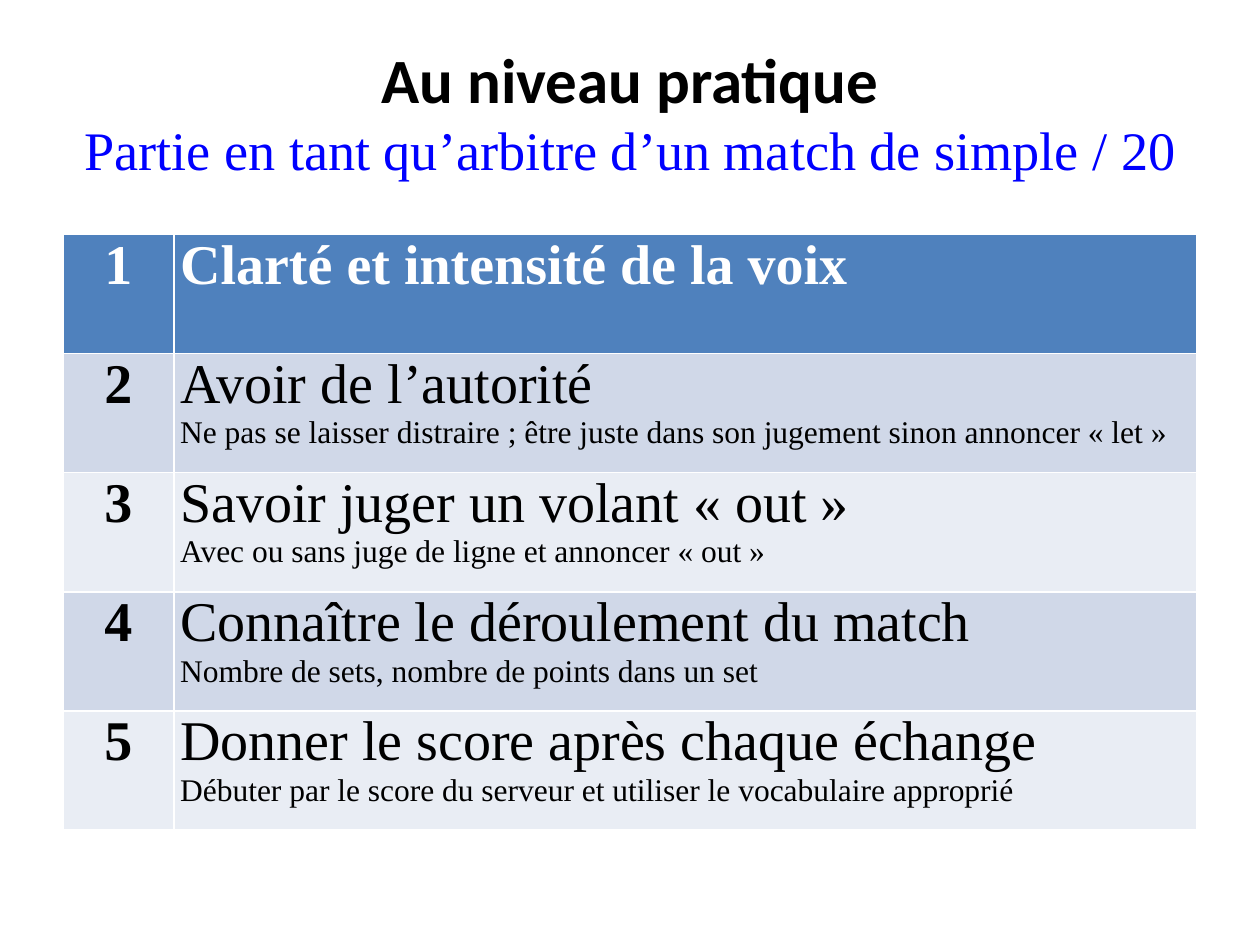
import pptx
import pptx.util
import pptx.dml.color
import pptx.enum.text

Inches = pptx.util.Inches
Align = pptx.enum.text.PP_ALIGN
Anchor = pptx.enum.text.MSO_ANCHOR

COLORS = {
    "black": "000000",
    "white": "FFFFFF",
    "blue": "0000FF",
    "head": "4F81BD",
    "dark": "D0D8E8",
    "light": "E9EDF4",
}
SERIF = "Times New Roman"

SKILLS = [
    ("Clarté et intensité de la voix", ""),
    ("Avoir de l’autorité",
     "Ne pas se laisser distraire ; être juste dans son jugement sinon annoncer « let »"),
    ("Savoir juger un volant « out »",
     "Avec ou sans juge de ligne et annoncer « out »"),
    ("Connaître le déroulement du match",
     "Nombre de sets, nombre de points dans un set"),
    ("Donner le score après chaque échange",
     "Débuter par le score du serveur et utiliser le vocabulaire approprié"),
]


def color(name):
    return pptx.dml.color.RGBColor.from_string(COLORS[name])


def add_run(para, text, size, ink="black", bold=False, font=SERIF):
    run = para.add_run()
    run.text = text
    run.font.name = font
    run.font.size = pptx.util.Pt(size)
    run.font.bold = bold
    run.font.color.rgb = color(ink)


def add_title(slide, left, top, width, height):
    box = slide.shapes.add_textbox(left, top, width, height)
    frame = box.text_frame
    frame.word_wrap = True
    frame.vertical_anchor = Anchor.MIDDLE
    para = frame.paragraphs[0]
    para.alignment = Align.CENTER
    add_run(para, "Au niveau pratique", 36, bold=True, font="Calibri")
    para.add_line_break()
    add_run(para, "Partie en tant qu’arbitre d’un match de simple / 20", 31, "blue")


def style_cell(cell, fill):
    """Fill the cell, set its margins and return its first paragraph."""
    cell.fill.solid()
    cell.fill.fore_color.rgb = color(fill)
    cell.margin_left = cell.margin_right = Inches(0.05)
    cell.margin_top = cell.margin_bottom = 0
    return cell.text_frame.paragraphs[0]


def add_skills(slide, left, top, width, height):
    table = slide.shapes.add_table(len(SKILLS), 2, left, top, width, height).table
    table.columns[0].width = Inches(0.88)
    table.columns[1].width = width - Inches(0.88)
    for row, (skill, detail) in enumerate(SKILLS):
        head = row == 0
        ink = "white" if head else "black"
        fill = "head" if head else ("light", "dark")[row % 2]
        number = style_cell(table.cell(row, 0), fill)
        number.alignment = Align.CENTER
        add_run(number, str(row + 1), 32, ink, bold=True)
        cell = table.cell(row, 1)
        add_run(style_cell(cell, fill), skill, 32, ink, bold=head)
        if detail:
            add_run(cell.text_frame.add_paragraph(), detail, 18, ink)


def main():
    deck = pptx.Presentation()
    deck.slide_width = Inches(10)
    deck.slide_height = Inches(7.5)
    slide = deck.slides.add_slide(deck.slide_layouts[6])
    add_title(slide, Inches(0.5), Inches(0.13), Inches(9), Inches(1.5))
    add_skills(slide, Inches(0.5), Inches(1.86), Inches(9), Inches(4.73))
    deck.save("out.pptx")


if __name__ == "__main__":
    main()
